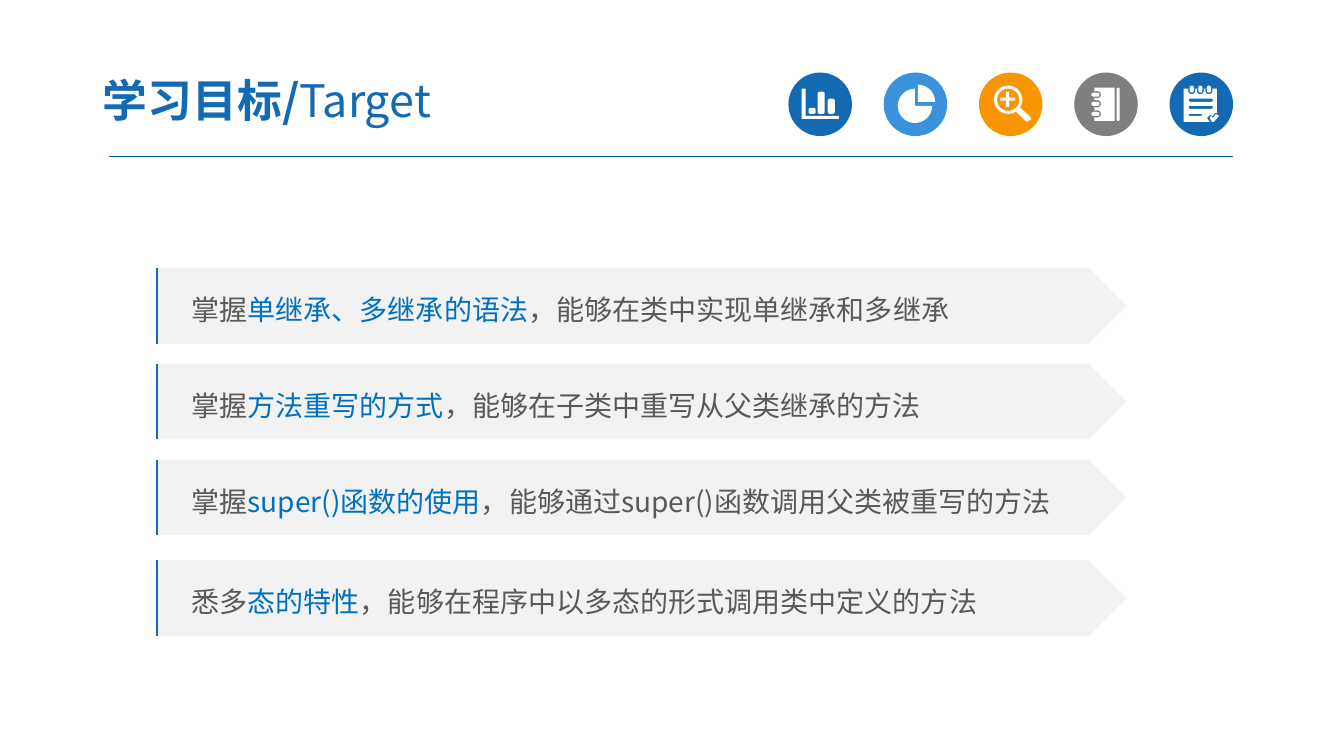
import math
from dataclasses import dataclass

from lxml import etree
from pptx import Presentation
from pptx import util as u
from pptx.dml.color import RGBColor
from pptx.enum import shapes, text
from pptx.oxml.ns import qn

PX = 9144  # 100 px to the inch
FONT = "Noto Sans CJK SC"
COLORS = {
    "brand": "1369B2", "sky": "3992DB", "orange": "F79600", "grey": "7F7F7F",
    "rule": "005B9E", "bar": "F2F2F2", "body": "595959", "key": "0070C0",
    "white": "FFFFFF",
}
DISC_LEFT, DISC_TOP, DISC_SIZE, DISC_STEP = 782, 72, 63, 94.5
BAR_LEFT, BAR_WIDTH, BAR_HEIGHT = 155, 962, 75

Outline = list[tuple[float, float]]


@dataclass
class Icon:
    color: str
    outlines: list[Outline]


@dataclass
class Goal:
    top: int
    verb: str
    key: str
    detail: str


def px(length: float) -> u.Emu:
    return u.Emu(round(length * PX))


def rgb(name: str) -> RGBColor:
    return RGBColor.from_string(COLORS[name])


def arc(cx: float, cy: float, r: float, start: int, end: int) -> Outline:
    """Points along an arc, in degrees clockwise from the right."""
    steps = max(6, (end - start) // 10)
    angles = [math.radians(start + (end - start) * i / steps) for i in range(steps + 1)]
    return [(cx + r * math.cos(a), cy + r * math.sin(a)) for a in angles]


def rounded(x: float, y: float, w: float, h: float) -> Outline:
    r = min(2, w / 2, h / 2)
    right, bottom = x + w - r, y + h - r
    return (arc(x + r, y + r, r, 180, 270) + arc(right, y + r, r, 270, 360)
            + arc(right, bottom, r, 0, 90) + arc(x + r, bottom, r, 90, 180))


def bar_chart() -> list[Outline]:
    axes = [(13, 16), (17, 16), (17, 43), (50, 43), (50, 46), (13, 46)]
    return [axes, *(rounded(x, y, 7, 41 - y) for x, y in ((20, 35), (29, 19), (39, 26)))]


def pie_chart() -> list[Outline]:
    return [[(34, 29), *arc(34, 29, 17, 270, 360)],
            [(31, 33), *arc(31, 33, 17, 0, 270)]]


def magnifier() -> list[Outline]:
    plus = [(27, 19), (30, 19), (30, 25), (36, 25), (36, 28), (30, 28),
            (30, 34), (27, 34), (27, 28), (21, 28), (21, 25), (27, 25)]
    handle = [(37, 39), (41, 35), (50, 43), (52, 46), (48, 49), (46, 48)]
    return [arc(29, 27, 14, 0, 360), arc(29, 27, 11, 0, 360), plus, handle]


def notebook() -> list[Outline]:
    outlines = [rounded(42, 15, 3, 33), [(20, 15), (40, 15), (40, 48), (20, 48)]]
    for y in (22, 31, 41):
        outlines.append([(20, y - 3.5), *arc(23, y, 3.5, -90, 90), (20, y + 3.5)])
        outlines.append(rounded(17, y - 2, 8, 4))
    return outlines


def checklist() -> list[Outline]:
    page = [(14, 16), (47, 16), (47, 40), (45, 40), (43, 43), (40, 42),
            (37, 45), (40, 49), (14, 49)]
    tick = [(40, 45), (41, 43), (43, 45), (46, 41), (49, 43), (44, 49), (42, 49)]
    outlines = [page, tick, rounded(19, 26, 24, 3), rounded(19, 33, 24, 3),
                rounded(19, 41, 13, 2)]
    for x in (22, 30.5, 39):
        outlines.append([(x + 3.5, 16), *arc(x, 18, 3.5, 0, 180), (x - 3.5, 16)])
        outlines.append(rounded(x - 2, 13, 4, 7))
    return outlines


ICONS = [
    Icon("brand", bar_chart()),
    Icon("sky", pie_chart()),
    Icon("orange", magnifier()),
    Icon("grey", notebook()),
    Icon("brand", checklist()),
]
GOALS = [
    Goal(266, "掌握", "单继承、多继承的语法", "，能够在类中实现单继承和多继承"),
    Goal(361, "掌握", "方法重写的方式", "，能够在子类中重写从父类继承的方法"),
    Goal(456, "掌握", "super()函数的使用", "，能够通过super()函数调用父类被重写的方法"),
    Goal(556, "悉多", "态的特性", "，能够在程序中以多态的形式调用类中定义的方法"),
]


def add_run(paragraph, words: str, *, size: int, color: str, bold: bool = False) -> None:
    run = paragraph.add_run()
    run.text = words
    run.font.size, run.font.bold = u.Pt(size), bold
    run.font.color.rgb = rgb(color)
    run.font.name = FONT
    etree.SubElement(run._r.get_or_add_rPr(), qn("a:ea"), typeface=FONT)


def paint(shape, color: str) -> None:
    shape.shadow.inherit = False
    shape.fill.solid()
    shape.fill.fore_color.rgb = rgb(color)
    shape.line.fill.background()


def add_line(slide, x1: int, y1: int, x2: int, y2: int, color: str, width: float) -> None:
    line = slide.shapes.add_connector(
        shapes.MSO_CONNECTOR.STRAIGHT, px(x1), px(y1), px(x2), px(y2))
    line.line.color.rgb = rgb(color)
    line.line.width = u.Pt(width)
    etree.SubElement(line._element.spPr, qn("a:effectLst"))


def add_icon(slide, icon: Icon, left: float) -> None:
    disc = slide.shapes.add_shape(
        shapes.MSO_SHAPE.OVAL, px(left), px(DISC_TOP), px(DISC_SIZE), px(DISC_SIZE))
    paint(disc, icon.color)
    placed = [[(px(left + x), px(DISC_TOP + y)) for x, y in outline]
              for outline in icon.outlines]
    builder = slide.shapes.build_freeform(*placed[0][0])
    builder.add_line_segments(placed[0][1:])
    for outline in placed[1:]:
        builder.move_to(*outline[0])
        builder.add_line_segments(outline[1:])
    paint(builder.convert_to_shape(), "white")


def add_goal(slide, goal: Goal) -> None:
    bar = slide.shapes.add_shape(
        shapes.MSO_SHAPE.PENTAGON, px(BAR_LEFT), px(goal.top), px(BAR_WIDTH), px(BAR_HEIGHT))
    paint(bar, "bar")
    frame = bar.text_frame
    frame.word_wrap = True
    frame.vertical_anchor = text.MSO_ANCHOR.MIDDLE
    frame.margin_left = px(35)
    sentence = frame.paragraphs[0]
    sentence.alignment = text.PP_ALIGN.LEFT
    sentence.line_spacing = 1.2
    add_run(sentence, goal.verb, size=20, color="body")
    add_run(sentence, goal.key, size=20, color="key")
    add_run(sentence, goal.detail, size=20, color="body")
    edge = BAR_LEFT + 1
    add_line(slide, edge, goal.top + BAR_HEIGHT, edge, goal.top, "brand", 1.5)


def add_heading(slide) -> None:
    title = slide.shapes.title
    title.left, title.top, title.width, title.height = px(89), px(63), px(522), px(72)
    frame = title.text_frame
    frame.word_wrap = True
    frame.auto_size = text.MSO_AUTO_SIZE.NONE
    frame.vertical_anchor = text.MSO_ANCHOR.MIDDLE
    frame.margin_left = frame.margin_right = px(13)
    frame.margin_top = frame.margin_bottom = px(7)
    heading = frame.paragraphs[0]
    heading.alignment = text.PP_ALIGN.LEFT
    add_run(heading, "学习目标/", size=32, color="brand", bold=True)
    add_run(heading, "Target", size=32, color="brand")


def main() -> None:
    deck = Presentation()
    deck.slide_width, deck.slide_height = px(1333), px(750)
    slide = deck.slides.add_slide(deck.slide_layouts.get_by_name("Title Only"))
    add_heading(slide)
    add_line(slide, 108, 155, 1223, 155, "rule", 0.75)
    for i, icon in enumerate(ICONS):
        add_icon(slide, icon, DISC_LEFT + i * DISC_STEP)
    for goal in GOALS:
        add_goal(slide, goal)
    deck.save("out.pptx")


if __name__ == "__main__":
    main()
